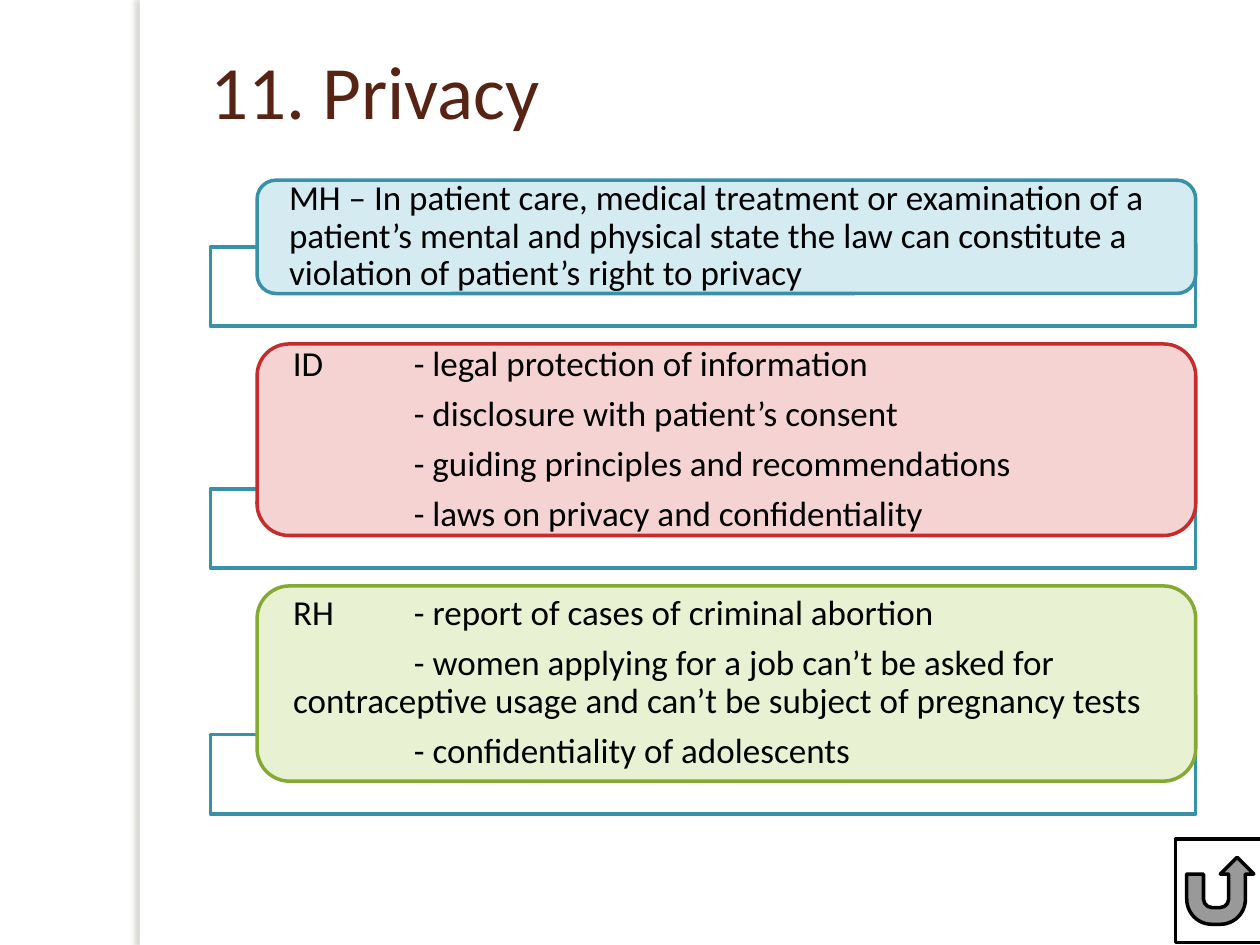
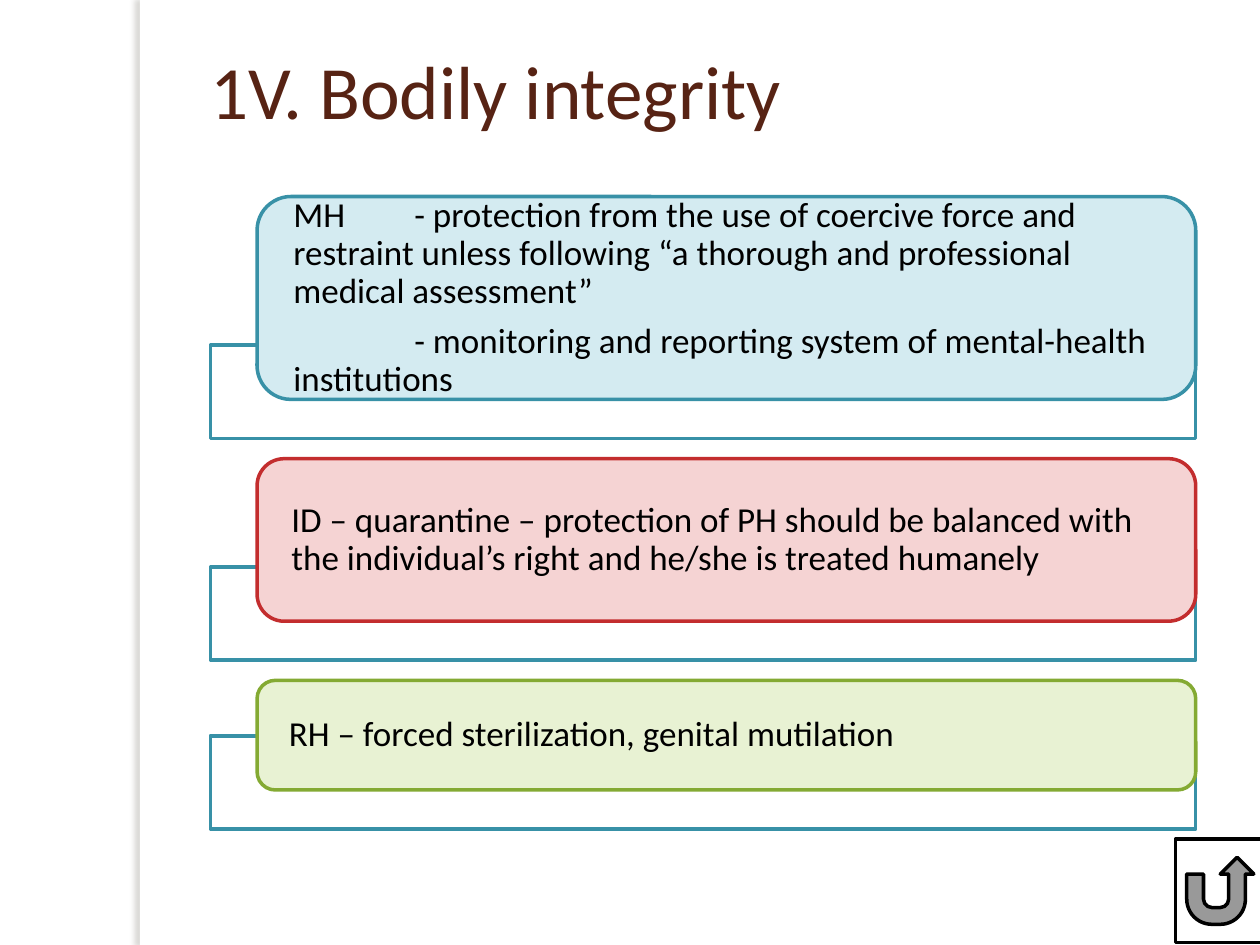
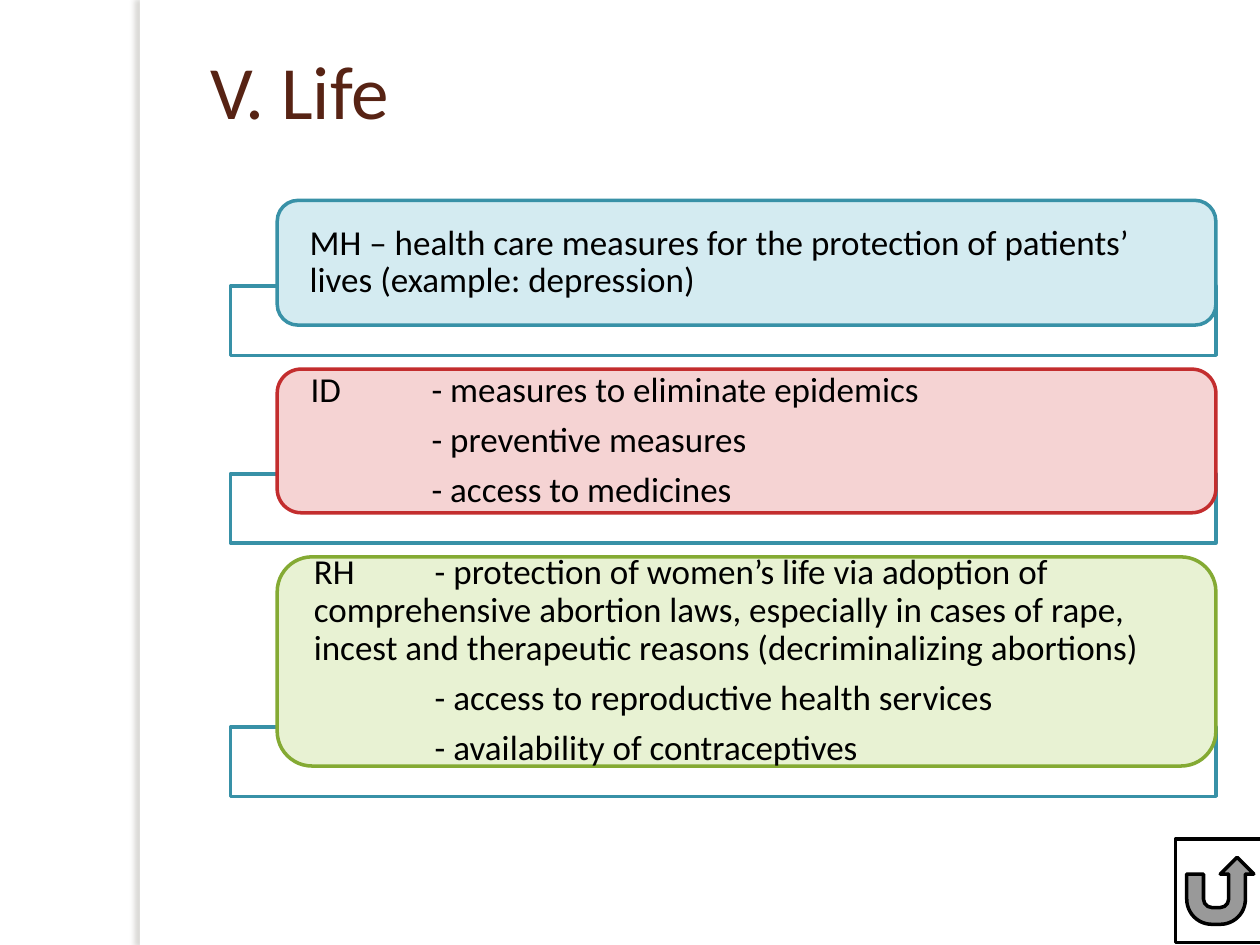
import pptx
import pptx.util
import pptx.dml.color
import pptx.enum.shapes
import pptx.enum.text
import pptx.oxml
import pptx.oxml.ns
from lxml import etree

Inches = pptx.util.Inches
Pt = pptx.util.Pt
RGBColor = pptx.dml.color.RGBColor
MSO_SHAPE = pptx.enum.shapes.MSO_SHAPE
MSO_ANCHOR = pptx.enum.text.MSO_ANCHOR
PP_ALIGN = pptx.enum.text.PP_ALIGN
qn = pptx.oxml.ns.qn

WHITE = RGBColor(0xFF, 0xFF, 0xFF)
BLACK = RGBColor(0, 0, 0)
BROWN = RGBColor(0x57, 0x23, 0x14)
TEAL = RGBColor(0x38, 0x91, 0xA7)
PANEL_COLORS = [
    (RGBColor(0xD4, 0xEB, 0xF1), TEAL),
    (RGBColor(0xF5, 0xD3, 0xD3), RGBColor(0xC3, 0x2D, 0x2E)),
    (RGBColor(0xE8, 0xF2, 0xD3), RGBColor(0x84, 0xAA, 0x33)),
]
FONT = "Calibri"
STRIP_WIDTH = 7.82
PANEL_WIDTH = 7.45
PANEL_INDENT = STRIP_WIDTH - PANEL_WIDTH
TAB_STOP = 0.96

BAND_SHADOW = (
    '<a:effectLst xmlns:a="http://schemas.openxmlformats.org/drawingml/2006/main">'
    '<a:outerShdw blurRad="38100" dist="38100" dir="10800000" algn="tl" rotWithShape="0">'
    '<a:srgbClr val="736F63"><a:alpha val="25000"/></a:srgbClr>'
    '</a:outerShdw></a:effectLst>'
)

TOPICS = [
    {
        "title": "11. Privacy",
        "left": 1.67, "top": 1.43,
        "strip_height": 0.63, "overlap": 0.37, "gap": 0.14,
        "panels": [
            (0.9, ["MH – In patient care, medical treatment or examination of a patient’s mental "
                   "and physical state the law can constitute a violation of patient’s right to privacy"]),
            (1.52, ["ID\t- legal protection of information",
                    "\t- disclosure with patient’s consent",
                    "\t- guiding principles and recommendations",
                    "\t- laws on privacy and confidentiality"]),
            (1.55, ["RH\t- report of cases of criminal abortion",
                    "\t- women applying for a job can’t be asked for contraceptive usage "
                    "and can’t be subject of pregnancy tests",
                    "\t- confidentiality of adolescents"]),
        ],
    },
    {
        "title": "1V. Bodily integrity",
        "left": 1.67, "top": 1.56,
        "strip_height": 0.74, "overlap": 0.43, "gap": 0.16,
        "panels": [
            (1.61, ["MH\t- protection from the use of coercive force and restraint unless "
                    "following “a thorough and professional medical assessment”",
                    "\t- monitoring and reporting system of mental-health institutions"]),
            (1.29, ["ID – quarantine – protection of PH should be balanced with "
                    "the individual’s right and he/she is treated humanely"]),
            (0.87, ["RH – forced sterilization, genital mutilation"]),
        ],
    },
    {
        "title": "V. Life",
        "left": 1.83, "top": 1.59,
        "strip_height": 0.55, "overlap": 0.31, "gap": 0.11,
        "panels": [
            (0.99, ["MH – health care measures for the protection of patients’ lives "
                    "(example: depression)"]),
            (1.14, ["ID\t- measures to eliminate epidemics",
                    "\t- preventive measures",
                    "\t- access to medicines"]),
            (1.66, ["RH\t- protection of women’s life via adoption of comprehensive abortion laws, "
                    "especially in cases of rape, incest and therapeutic reasons "
                    "(decriminalizing abortions)",
                    "\t- access to reproductive health services",
                    "\t- availability of contraceptives"]),
        ],
    },
]


def add_box(slide, preset, left, top, width, height, fill, line=None):
    box = slide.shapes.add_shape(preset, Inches(left), Inches(top), Inches(width), Inches(height))
    box.shadow.inherit = False
    box.fill.solid()
    box.fill.fore_color.rgb = fill
    if line is None:
        box.line.fill.background()
    else:
        box.line.color.rgb = line
        box.line.width = Pt(2)
    return box


def style_font(paragraph, size, color):
    paragraph.font.name = FONT
    paragraph.font.size = Pt(size)
    paragraph.font.color.rgb = color


def add_side_band(slide):
    band = add_box(slide, MSO_SHAPE.RECTANGLE, 1.11, 0, 0.08, 7.5, WHITE)
    properties = band._element.spPr
    properties.replace(properties.find(qn("a:effectLst")), pptx.oxml.parse_xml(BAND_SHADOW))


def add_title(slide, text):
    title = slide.shapes.add_textbox(Inches(1.57), Inches(0.3), Inches(8.2), Inches(1.25))
    title.text_frame.word_wrap = True
    heading = title.text_frame.paragraphs[0]
    heading.text = text
    style_font(heading, 43, BROWN)


def add_strip(slide, left, top, height):
    strip = add_box(slide, MSO_SHAPE.RECTANGLE, left, top, STRIP_WIDTH, height, WHITE, TEAL)
    color = strip._element.spPr.find(qn("a:solidFill"))[0]
    etree.SubElement(color, qn("a:alpha"), val="90000")


def add_panel(slide, left, top, height, colors, lines):
    panel = add_box(slide, MSO_SHAPE.ROUNDED_RECTANGLE, left, top, PANEL_WIDTH, height, *colors)
    frame = panel.text_frame
    frame.word_wrap = True
    frame.vertical_anchor = MSO_ANCHOR.MIDDLE
    frame.margin_left = frame.margin_right = Inches(0.21)
    frame.margin_top = frame.margin_bottom = 0
    frame.text = "\n".join(lines)
    for paragraph in frame.paragraphs:
        paragraph.alignment = PP_ALIGN.LEFT
        paragraph.line_spacing = 0.9
        paragraph.space_after = Pt(7)
        tabs = etree.SubElement(paragraph._p.get_or_add_pPr(), qn("a:tabLst"))
        etree.SubElement(tabs, qn("a:tab"), pos=str(Inches(TAB_STOP)), algn="l")
        style_font(paragraph, 20, BLACK)


def add_panel_stack(slide, topic):
    top = topic["top"]
    for colors, (height, lines) in zip(PANEL_COLORS, topic["panels"]):
        strip_top = top + height - topic["overlap"]
        add_strip(slide, topic["left"], strip_top, topic["strip_height"])
        add_panel(slide, topic["left"] + PANEL_INDENT, top, height, colors, lines)
        top = strip_top + topic["strip_height"] + topic["gap"]


def add_return_button(slide):
    add_box(slide, MSO_SHAPE.ACTION_BUTTON_RETURN, 9.33, 6.66, 0.71, 0.82, WHITE, BLACK)


def main():
    deck = pptx.Presentation()
    deck.slide_width = Inches(10)
    deck.slide_height = Inches(7.5)
    for topic in TOPICS:
        slide = deck.slides.add_slide(deck.slide_layouts[6])
        add_side_band(slide)
        add_title(slide, topic["title"])
        add_panel_stack(slide, topic)
        add_return_button(slide)
    deck.save("out.pptx")


if __name__ == "__main__":
    main()
